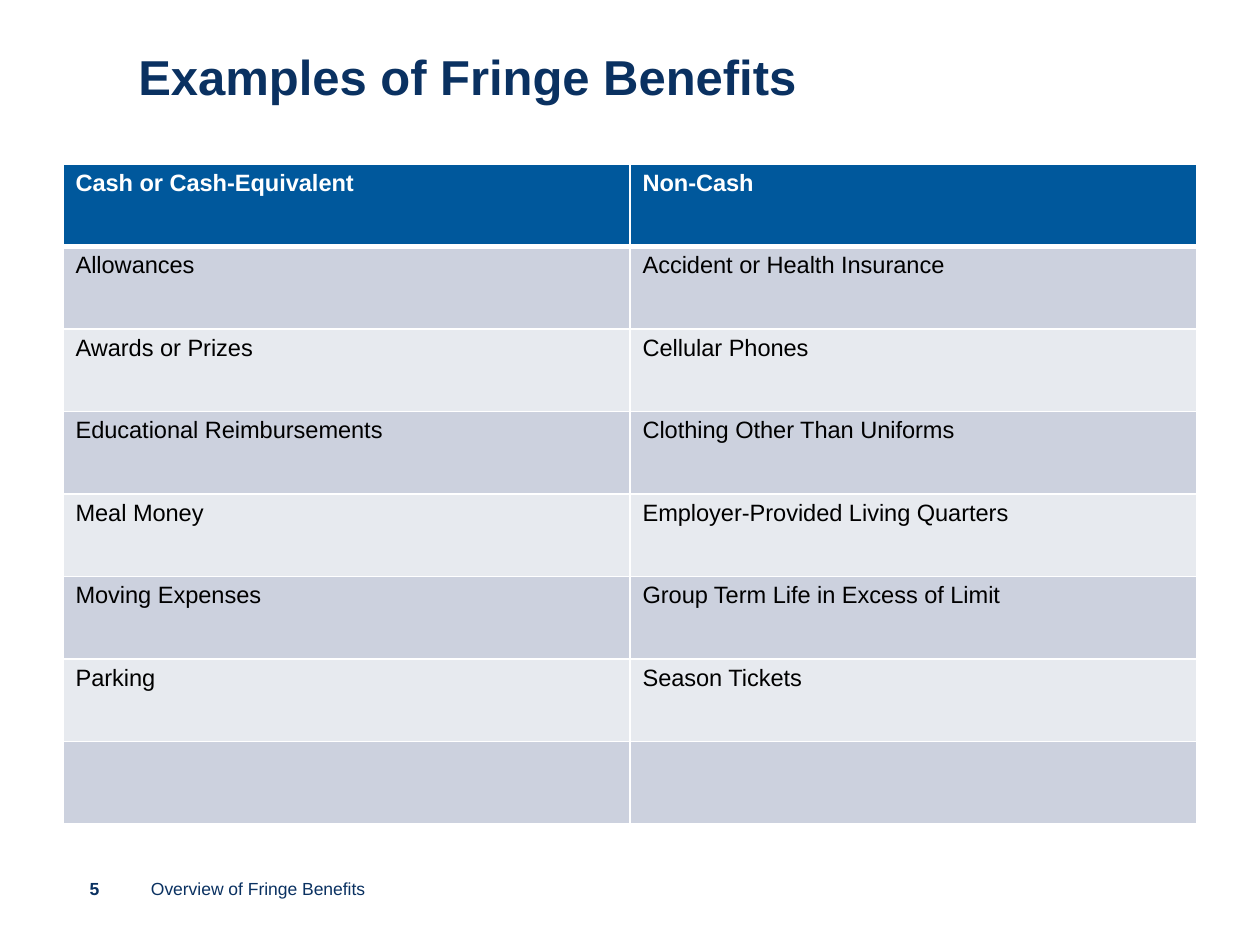
from lxml import etree
from pptx import Presentation
from pptx.dml.color import RGBColor
from pptx.enum import text
from pptx.oxml import ns
from pptx.util import Inches, Pt

NAVY = RGBColor(0x0A, 0x31, 0x61)
BLUE = RGBColor(0x00, 0x58, 0x9C)
BAND_DARK = RGBColor(0xCC, 0xD1, 0xDE)
BAND_LIGHT = RGBColor(0xE7, 0xEA, 0xEF)
WHITE = RGBColor(0xFF, 0xFF, 0xFF)
BLACK = RGBColor(0x00, 0x00, 0x00)
FONT = "Arial"

TITLE = "Examples of Fringe Benefits"
FOOTER = "Overview of Fringe Benefits"
PAGE_NUMBER = "5"
BENEFITS = [
    ("Cash or Cash-Equivalent", "Non-Cash"),
    ("Allowances", "Accident or Health Insurance"),
    ("Awards or Prizes", "Cellular Phones"),
    ("Educational Reimbursements", "Clothing Other Than Uniforms"),
    ("Meal Money", "Employer-Provided Living Quarters"),
    ("Moving Expenses", "Group Term Life in Excess of Limit"),
    ("Parking", "Season Tickets"),
    ("", ""),
]


def add_run(paragraph, words, size, color, bold=False):
    run = paragraph.add_run()
    run.text = words
    run.font.name = FONT
    run.font.size = Pt(size)
    run.font.bold = bold
    run.font.color.rgb = color


def add_label(slide, box, words, size, bold=False, align=text.PP_ALIGN.LEFT):
    shape = slide.shapes.add_textbox(*map(Inches, box))
    frame = shape.text_frame
    frame.word_wrap = True
    frame.vertical_anchor = text.MSO_ANCHOR.MIDDLE
    paragraph = frame.paragraphs[0]
    paragraph.alignment = align
    add_run(paragraph, words, size, NAVY, bold)
    return paragraph


def set_borders(cell, widths):
    properties = cell._tc.get_or_add_tcPr()
    for position, (side, width) in enumerate(widths.items()):
        line = etree.Element(ns.qn(f"a:{side}"), w=str(Pt(width)))
        fill = etree.SubElement(line, ns.qn("a:solidFill"))
        etree.SubElement(fill, ns.qn("a:srgbClr"), val=str(WHITE))
        properties.insert(position, line)


def add_benefits_table(slide):
    row_count, column_count = len(BENEFITS), len(BENEFITS[0])
    table = slide.shapes.add_table(
        row_count, column_count, Inches(0.5), Inches(1.3), Inches(9), Inches(5.24)
    ).table
    for row_index, row in enumerate(BENEFITS):
        header = row_index == 0
        band = BAND_DARK if row_index % 2 else BAND_LIGHT
        widths = {
            "lnL": 1,
            "lnR": 1,
            "lnT": 3 if row_index == 1 else 1,
            "lnB": 3 if header else 1,
        }
        for column_index, words in enumerate(row):
            cell = table.cell(row_index, column_index)
            cell.fill.solid()
            cell.fill.fore_color.rgb = BLUE if header else band
            set_borders(cell, widths)
            if words:
                paragraph = cell.text_frame.paragraphs[0]
                add_run(paragraph, words, 13.5, WHITE if header else BLACK, header)


def main():
    presentation = Presentation()
    presentation.slide_width = Inches(10)
    presentation.slide_height = Inches(7.5)
    slide = presentation.slides.add_slide(presentation.slide_layouts[6])
    title = add_label(slide, (1, 0.26, 7.26, 0.75), TITLE, 28, bold=True)
    title.line_spacing = 0.9
    add_benefits_table(slide)
    add_label(slide, (1.1, 6.85, 4, 0.4), FOOTER, 10)
    add_label(slide, (0.5, 6.85, 0.5, 0.4), PAGE_NUMBER, 10, True, text.PP_ALIGN.CENTER)
    presentation.save("out.pptx")


if __name__ == "__main__":
    main()
